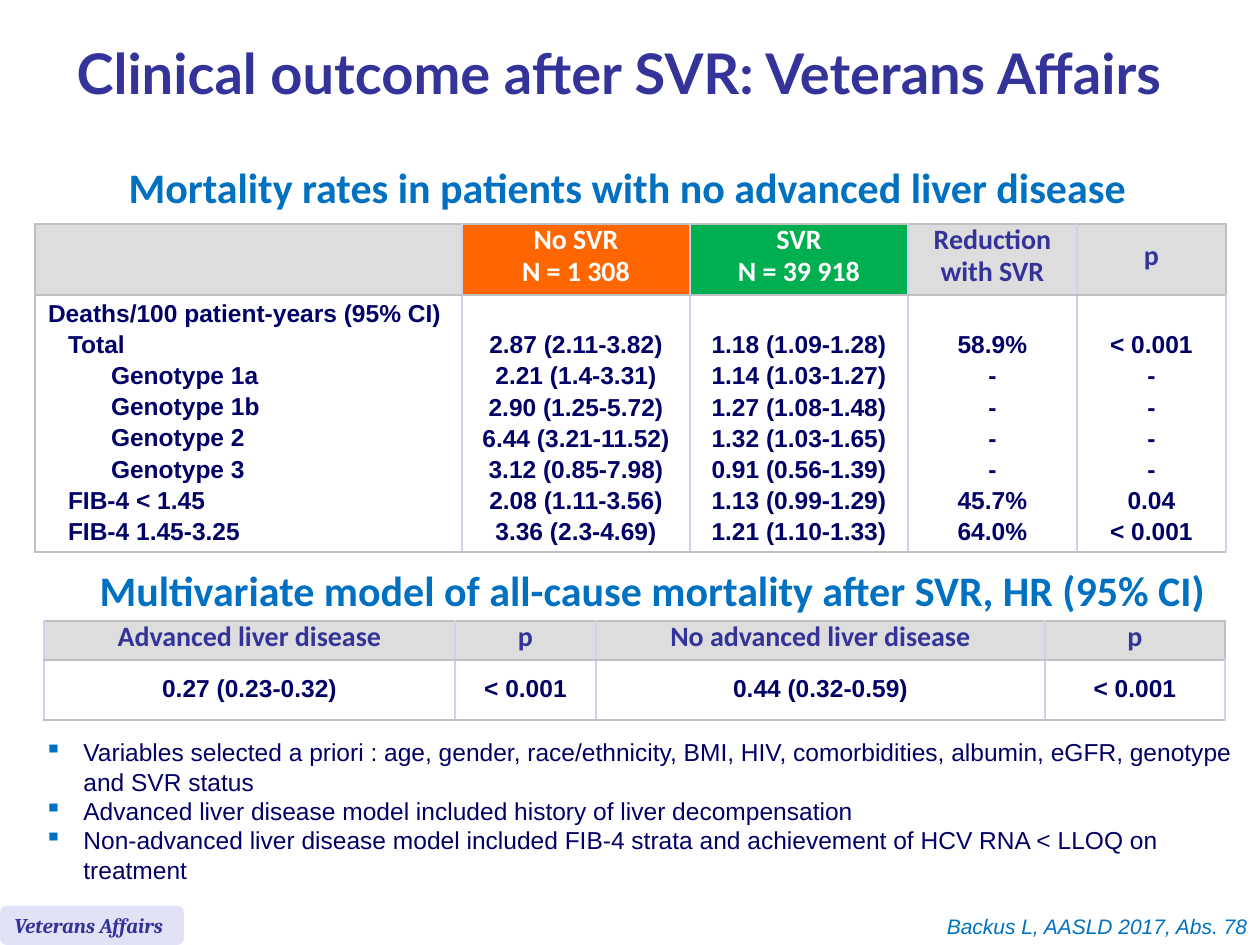
from lxml.etree import SubElement
from pptx import Presentation
from pptx.dml.color import RGBColor
from pptx.enum.shapes import MSO_SHAPE
from pptx.enum.text import MSO_ANCHOR, MSO_AUTO_SIZE, PP_ALIGN
from pptx.oxml.ns import qn
from pptx.util import Pt

EMU_PER_PX = 914400 / 126
NAVY, INDIGO, BLUE, WHITE = "000066", "333399", "0070C0", "FFFFFF"
GREY, SILVER, LAVENDER = "DDDDDD", "C0C0C0", "D0D0F0"

HEADER = dict(name="Calibri", size=Pt(16), bold=True)
BODY = dict(name="Arial", size=Pt(14), bold=True)
LINE = Pt(15)


def px(length):
    return round(length * EMU_PER_PX)


def rgb(value):
    return RGBColor.from_string(value)


def write(frame, lines, font, color, alignment=PP_ALIGN.LEFT, line_spacing=None, gap=0):
    """Fill a text frame with one paragraph per line; gap is the space between them in points."""
    frame.word_wrap = True
    for index, line in enumerate(lines):
        paragraph = frame.add_paragraph() if index else frame.paragraphs[0]
        layout = dict(alignment=alignment, line_spacing=line_spacing,
                      space_before=Pt(gap if index else 0))
        for name, value in layout.items():
            setattr(paragraph, name, value)
        run = paragraph.add_run()
        run.text = line
        for name, value in font.items():
            setattr(run.font, name, value)
        run.font.color.rgb = rgb(color)


def set_indent(paragraph, left, first=0):
    properties = paragraph._p.get_or_add_pPr()
    properties.set("marL", str(px(left)))
    properties.set("indent", str(px(first)))
    return properties


def add_text(slide, box, lines, font, color, **layout):
    shape = slide.shapes.add_textbox(*map(px, box))
    write(shape.text_frame, lines, font, color, **layout)
    return shape


def add_heading(slide, box, text):
    add_text(slide, box, [text], dict(name="Calibri", size=Pt(24), bold=True), BLUE,
             alignment=PP_ALIGN.CENTER, line_spacing=Pt(15.2))


def set_borders(cell, **colors):
    properties = cell._tc.get_or_add_tcPr()
    for side in "LRTB":
        line = SubElement(properties, qn(f"a:ln{side}"), w=str(Pt(1)))
        fill = SubElement(line, qn("a:solidFill"))
        SubElement(fill, qn("a:srgbClr"), val=colors[side])


def add_grid(slide, box, widths, heights, header_fills, left_edge):
    """Add a two-row table: coloured header cells over white body cells."""
    table = slide.shapes.add_table(2, len(widths), *map(px, box)).table
    table.horz_banding = False
    for column, width in zip(table.columns, widths):
        column.width = px(width)
    for row, height in zip(table.rows, heights):
        row.height = px(height)
    last = len(widths) - 1
    for row in range(2):
        for column in range(last + 1):
            cell = table.cell(row, column)
            set_borders(cell, T=SILVER, B=SILVER,
                        L=LAVENDER if column else left_edge,
                        R=SILVER if row == 0 and column == last else LAVENDER)
            cell.fill.solid()
            cell.fill.fore_color.rgb = rgb(WHITE if row else header_fills[column])
            cell.vertical_anchor = MSO_ANCHOR.MIDDLE
            margins = dict(margin_left=13, margin_right=13, margin_top=6, margin_bottom=6)
            for name, value in margins.items():
                setattr(cell, name, px(value))
    return table


def write_cell(cell, lines, font, color, alignment=PP_ALIGN.CENTER):
    write(cell.text_frame, lines, font, color, alignment=alignment,
          line_spacing=LINE, gap=font["size"].pt * 0.2)


def add_mortality_table(slide, box):
    headers = [
        (["No SVR", "N = 1 308"], "FF6600", WHITE),
        (["SVR", "N = 39 918"], "00B050", WHITE),
        (["Reduction", "with SVR"], GREY, INDIGO),
        (["p"], GREY, INDIGO),
    ]
    # Label, left indent, values for the four columns
    rows = [
        ("Total", 20, "2.87 (2.11-3.82)", "1.18 (1.09-1.28)", "58.9%", "< 0.001"),
        ("Genotype 1a", 63, "2.21 (1.4-3.31)", "1.14 (1.03-1.27)", "-", "-"),
        ("Genotype 1b", 63, "2.90 (1.25-5.72)", "1.27 (1.08-1.48)", "-", "-"),
        ("Genotype 2", 63, "6.44 (3.21-11.52)", "1.32 (1.03-1.65)", "-", "-"),
        ("Genotype 3", 63, "3.12 (0.85-7.98)", "0.91 (0.56-1.39)", "-", "-"),
        ("FIB-4 < 1.45", 20, "2.08 (1.11-3.56)", "1.13 (0.99-1.29)", "45.7%", "0.04"),
        ("FIB-4 1.45-3.25", 20, "3.36 (2.3-4.69)", "1.21 (1.10-1.33)", "64.0%", "< 0.001"),
    ]
    labels, indents, *columns = zip(*rows)
    fills = [GREY] + [fill for _, fill, _ in headers]
    table = add_grid(slide, box, [427, 228, 218, 169, 149], [71, 257], fills, SILVER)

    label_cell = table.cell(1, 0)
    write_cell(label_cell, ["Deaths/100 patient-years (95% CI)", *labels],
               BODY, NAVY, PP_ALIGN.LEFT)
    for paragraph, indent in zip(label_cell.text_frame.paragraphs[1:], indents):
        set_indent(paragraph, indent)

    # Values sit at the bottom, level with their labels
    for index, ((lines, _, color), values) in enumerate(zip(headers, columns), start=1):
        write_cell(table.cell(0, index), lines, HEADER, color)
        write_cell(table.cell(1, index), values, BODY, NAVY)
        table.cell(1, index).vertical_anchor = MSO_ANCHOR.BOTTOM


def add_model_table(slide, box):
    columns = [
        ("Advanced liver disease", "0.27 (0.23-0.32)"),
        ("p", "< 0.001"),
        ("No advanced liver disease", "0.44 (0.32-0.59)"),
        ("p", "< 0.001"),
    ]
    table = add_grid(slide, box, [411, 141, 449, 180], [39, 60], [GREY] * 4, LAVENDER)
    for index, (header, value) in enumerate(columns):
        write_cell(table.cell(0, index), [header], HEADER, INDIGO)
        write_cell(table.cell(1, index), [value], BODY, NAVY)


def add_notes_list(slide, box):
    lines = [
        "Variables selected a priori : age, gender, race/ethnicity, BMI, HIV, comorbidities, "
        "albumin, eGFR, genotype and SVR status",
        "Advanced liver disease model included history of liver decompensation",
        "Non-advanced liver disease model included FIB-4 strata and achievement of "
        "HCV RNA < LLOQ on treatment",
    ]
    shape = add_text(slide, box, lines, dict(name="Arial", size=Pt(14)), NAVY)
    for paragraph in shape.text_frame.paragraphs:
        properties = set_indent(paragraph, 39, -39)
        color = SubElement(properties, qn("a:buClr"))
        SubElement(color, qn("a:srgbClr"), val=BLUE)
        SubElement(properties, qn("a:buChar"), char="▪")


def add_title(slide, box):
    title = slide.shapes.title
    for name, value in zip(("left", "top", "width", "height"), box):
        setattr(title, name, px(value))
    frame = title.text_frame
    frame.auto_size = MSO_AUTO_SIZE.NONE
    frame.vertical_anchor = MSO_ANCHOR.MIDDLE
    write(frame, ["Clinical outcome after SVR: Veterans Affairs"],
          dict(name="Lato", size=Pt(32), bold=True), INDIGO, line_spacing=0.85)


def add_footer(slide, box):
    left, top, width, height = box
    # Study tag
    tag = slide.shapes.add_shape(MSO_SHAPE.ROUNDED_RECTANGLE,
                                 *map(px, (left, top, 184, height)))
    tag.adjustments[0] = 0.17
    tag.shadow.inherit = False
    tag.fill.solid()
    tag.fill.fore_color.rgb = rgb("E2E2F6")
    tag.line.fill.background()
    tag.text_frame.vertical_anchor = MSO_ANCHOR.MIDDLE
    write(tag.text_frame, ["Veterans Affairs"],
          dict(name="Cambria", size=Pt(12), bold=True, italic=True), INDIGO)
    # Reference
    add_text(slide, (left + width - 679, top + 1, 679, height - 1),
             ["Backus L, AASLD 2017, Abs. 78"],
             dict(name="Arial", size=Pt(12), italic=True), BLUE, alignment=PP_ALIGN.RIGHT)


def main():
    presentation = Presentation()
    presentation.slide_width, presentation.slide_height = px(1260), px(945)
    slide = presentation.slides.add_slide(presentation.slide_layouts[5])
    add_title(slide, (64, 10, 1196, 135))
    add_heading(slide, (10, 179, 1235, 44),
                "Mortality rates in patients with no advanced liver disease")
    add_mortality_table(slide, (35, 224, 1191, 328))
    add_heading(slide, (79, 582, 1147, 44),
                "Multivariate model of all-cause mortality after SVR, HR (95% CI)")
    add_model_table(slide, (44, 621, 1181, 99))
    add_notes_list(slide, (32, 731, 1215, 161))
    add_footer(slide, (0, 906, 1260, 39))
    presentation.save("out.pptx")


if __name__ == "__main__":
    main()
